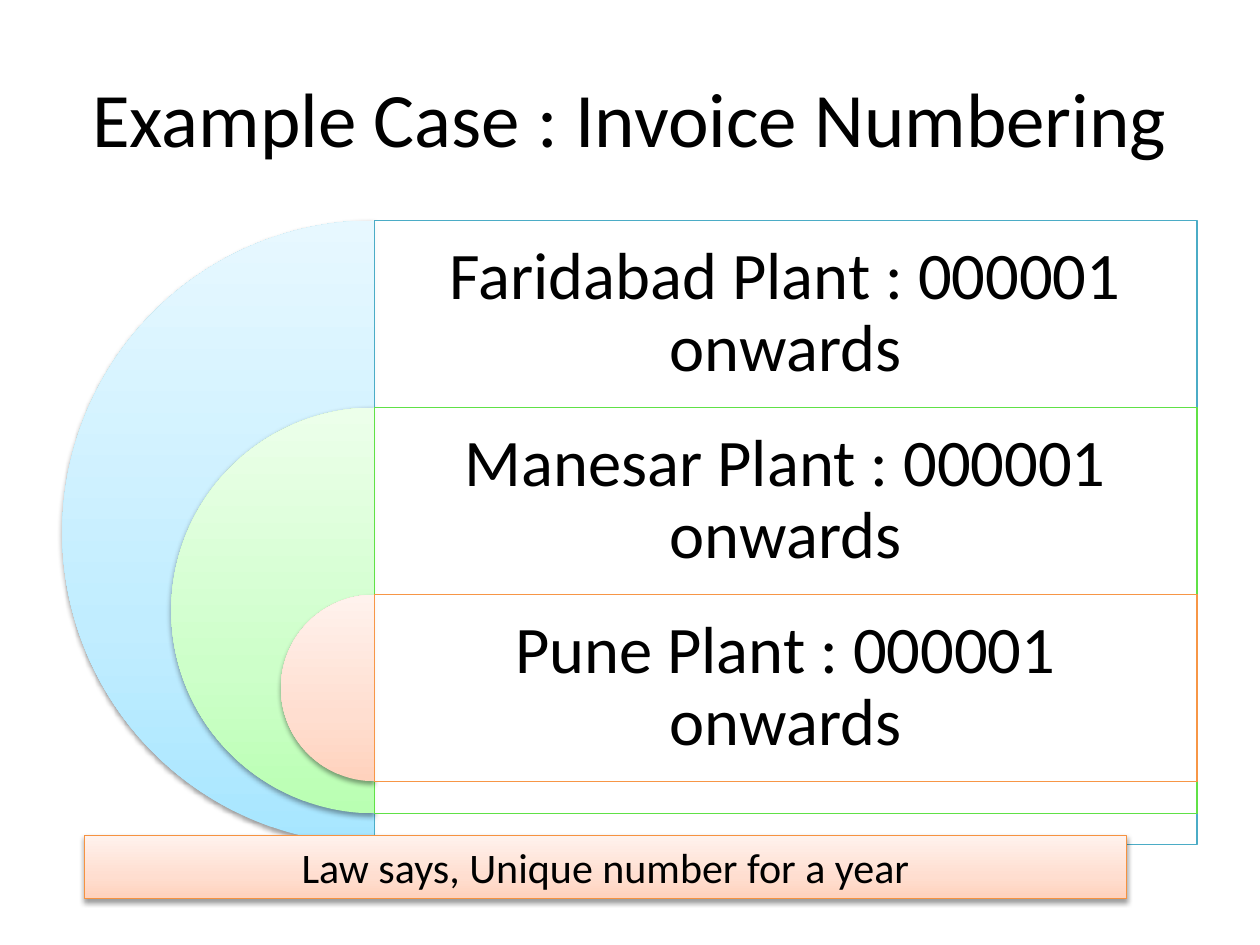
from pptx import Presentation
from pptx.dml.color import RGBColor
from pptx.enum.shapes import MSO_SHAPE
from pptx.enum.text import MSO_ANCHOR, PP_ALIGN
from pptx.oxml import parse_xml
from pptx.oxml.ns import nsdecls, qn
from pptx.util import Inches, Pt


def write(shape, text, size, inset, spacing):
    frame = shape.text_frame
    frame_format = {
        "word_wrap": True,
        "vertical_anchor": MSO_ANCHOR.MIDDLE,
        "margin_left": inset,
        "margin_right": inset,
        "margin_top": min(inset, Inches(0.16)),
        "margin_bottom": min(inset, Inches(0.16)),
    }
    for name, value in frame_format.items():
        setattr(frame, name, value)
    para = frame.paragraphs[0]
    para.alignment = PP_ALIGN.CENTER
    para.line_spacing = spacing
    span = para.add_run()
    span.text = text
    for name, value in {"name": "Calibri", "size": Pt(size)}.items():
        setattr(span.font, name, value)
    span.font.color.rgb = RGBColor.from_string("000000")


def shade(shape, colors):
    stops = "".join(
        f'<a:gs pos="{position}"><a:srgbClr val="{color}"/></a:gs>'
        for position, color in zip((0, 35000, 100000), colors)
    )
    properties = shape.fill._xPr
    properties.insert(2, parse_xml(
        f'<a:gradFill {nsdecls("a")} rotWithShape="1"><a:gsLst>{stops}</a:gsLst>'
        '<a:lin ang="16200000" scaled="0"/></a:gradFill>'
    ))
    shape.shadow.inherit = False
    properties.find(qn("a:effectLst")).append(parse_xml(
        f'<a:outerShdw {nsdecls("a")} blurRad="{Pt(3.1)}" dist="{Pt(1.6)}" '
        'dir="5400000" rotWithShape="0"><a:srgbClr val="000000">'
        '<a:alpha val="38000"/></a:srgbClr></a:outerShdw>'
    ))


deck = Presentation()
deck.slide_width, deck.slide_height = Inches(10), Inches(7.5)
page = deck.slides.add_slide(deck.slide_layouts[6])
shapes = page.shapes

title = shapes.add_textbox(Inches(0.5), Inches(0.3), Inches(9), Inches(1.25))
write(title, "Example Case : Invoice Numbering", 44, Inches(0.1), 1)

peach = ("FFD2BD", "FFDED0", "FFF2ED")
plants = [
    ("Faridabad", 4.95, "4BACC6", ("A7E6FF", "C1EDFF", "E7F8FF")),
    ("Manesar", 3.22, "60E146", ("B9FFB2", "CDFFC9", "ECFFEA")),
    ("Pune", 1.48, "F79646", peach),
]
left, width = Inches(2.97), Inches(6.53)
row_height = Inches(1.485)

for index, (plant, size, line_color, colors) in enumerate(plants):
    top = Inches(1.75) + index * row_height
    diameter = Inches(size)

    pie = shapes.add_shape(MSO_SHAPE.PIE, left - diameter // 2, top, diameter, diameter)
    pie.adjustments[0], pie.adjustments[1] = 54, 162
    shade(pie, colors)
    pie.line.fill.background()

    panel = shapes.add_shape(MSO_SHAPE.RECTANGLE, left, top, width, diameter)
    panel.shadow.inherit = False
    panel.fill.solid()
    panel.fill.fore_color.rgb = RGBColor.from_string("FFFFFF")
    fill_color = panel.fill._xPr.find(qn("a:solidFill"))[0]
    fill_color.append(parse_xml(f'<a:alpha {nsdecls("a")} val="90000"/>'))
    panel.line.color.rgb = RGBColor.from_string(line_color)
    panel.line.width = Pt(0.75)

    label = shapes.add_textbox(left, top, width, row_height)
    write(label, f"{plant} Plant : 000001 onwards", 38, Inches(0.16), 0.9)

banner = shapes.add_shape(
    MSO_SHAPE.RECTANGLE, Inches(0.67), Inches(6.63), Inches(8.27), Inches(0.5)
)
shade(banner, peach)
banner.line.color.rgb = RGBColor.from_string("F69240")
banner.line.width = Pt(0.75)
write(banner, "Law says, Unique number for a year", 24, Inches(0.05), 1)

deck.save("out.pptx")
